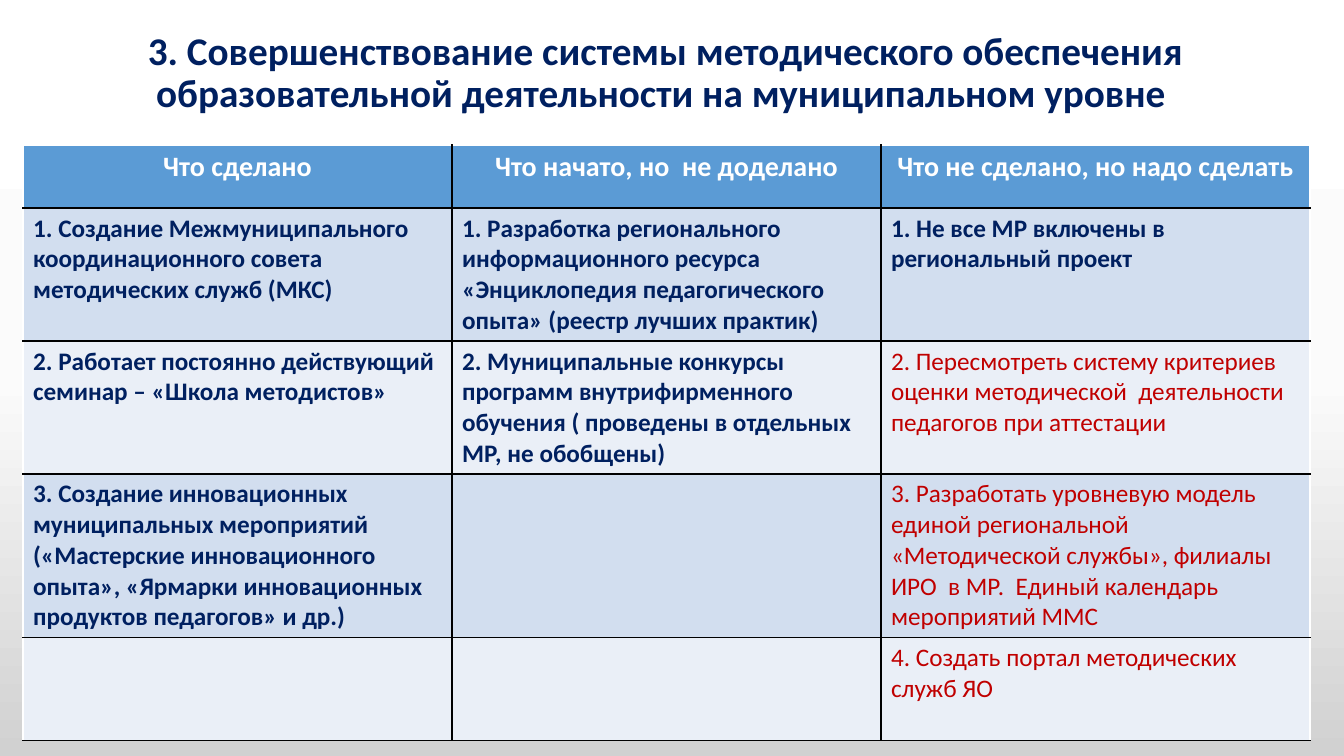
from pptx import Presentation
from pptx.dml.color import RGBColor
from pptx.enum.text import MSO_ANCHOR, PP_ALIGN
from pptx.oxml import parse_xml
from pptx.oxml.ns import nsdecls, qn
from pptx.util import Emu, Pt

TITLE = ("3. Совершенствование системы методического обеспечения "
         "образовательной деятельности на муниципальном уровне ")
HEADERS = ["Что сделано", "Что начато, но  не доделано", "Что не сделано, но надо сделать"]
TASKS = [
    ["1. Создание Межмуниципального координационного совета методических служб (МКС)",
     "1. Разработка регионального информационного ресурса «Энциклопедия педагогического "
     "опыта» (реестр лучших практик)",
     "1. Не все МР включены в региональный проект"],
    ["2. Работает постоянно действующий семинар – «Школа методистов»",
     "2. Муниципальные конкурсы программ внутрифирменного обучения ( проведены в отдельных "
     "МР, не обобщены)",
     "2. Пересмотреть систему критериев оценки методической  деятельности педагогов при аттестации"],
    ["3. Создание инновационных муниципальных мероприятий («Мастерские инновационного опыта», "
     "«Ярмарки инновационных продуктов педагогов» и др.)",
     "",
     "3. Разработать уровневую модель единой региональной «Методической службы», филиалы "
     "ИРО  в МР.  Единый календарь мероприятий ММС"],
    ["", "", "4. Создать портал методических служб ЯО"],
]
COLORS = {
    "navy": "002060", "red": "C00000", "white": "FFFFFF", "black": "000000",
    "header": "5B9BD5", "odd": "D2DEEF", "even": "EAEFF7",
}
BACKGROUND_STOPS = [(0, "FFFFFF"), (50, "FBFBFB"), (100, "D1D1D1")]

PX = 9072
SLIDE_SIZE = (1344, 756)
TITLE_BOX = (23, 16, 1284, 115)
TABLE_LEFT, TABLE_TOP, COLUMN_WIDTH = 23, 145, 429
ROW_HEIGHTS = [63, 133, 133, 164, 103]


def px(length):
    return Emu(length * PX)


def write(frame, text, size=18, color="navy", bold=True, align=PP_ALIGN.LEFT, spacing=None):
    frame.word_wrap = True
    paragraph = frame.paragraphs[0]
    paragraph.alignment = align
    paragraph.line_spacing = spacing
    if not text:
        paragraph.font.size = Pt(size)
        return
    run = paragraph.add_run()
    run.text = text
    run.font.name = "Calibri"
    run.font.size = Pt(size)
    run.font.bold = bold
    run.font.color.rgb = RGBColor.from_string(COLORS[color])


def set_borders(cell, **sides):
    properties = cell._tc.get_or_add_tcPr()
    for index, side in enumerate("LRTB"):
        properties.insert(index, parse_xml(
            f'<a:ln{side} {nsdecls("a")} w="12700"><a:solidFill>'
            f'<a:srgbClr val="{COLORS[sides[side]]}"/></a:solidFill></a:ln{side}>'))


def paint_background(slide):
    fill = slide.background.fill
    fill.gradient()
    fill.gradient_angle = 270
    stops = next(slide.element.iter(qn("a:gsLst")))
    for stop in list(stops):
        stops.remove(stop)
    for position, color in BACKGROUND_STOPS:
        stops.append(parse_xml(
            f'<a:gs {nsdecls("a")} pos="{position * 1000}"><a:srgbClr val="{color}"/></a:gs>'))


def add_title(slide):
    frame = slide.shapes.add_textbox(*map(px, TITLE_BOX)).text_frame
    frame.vertical_anchor = MSO_ANCHOR.MIDDLE
    write(frame, TITLE, size=28, align=PP_ALIGN.CENTER, spacing=0.9)


def add_task_table(slide):
    rows = [HEADERS] + TASKS
    last_column = len(HEADERS) - 1
    table = slide.shapes.add_table(
        len(rows), len(HEADERS), px(TABLE_LEFT), px(TABLE_TOP),
        px(COLUMN_WIDTH * len(HEADERS)), px(sum(ROW_HEIGHTS))).table
    for column in table.columns:
        column.width = px(COLUMN_WIDTH)
    for r, texts in enumerate(rows):
        table.rows[r].height = px(ROW_HEIGHTS[r])
        band = "header" if r == 0 else "odd" if r % 2 else "even"
        for c, text in enumerate(texts):
            cell = table.cell(r, c)
            cell.fill.solid()
            cell.fill.fore_color.rgb = RGBColor.from_string(COLORS[band])
            set_borders(cell,
                        L="black" if c else "white",
                        R="white" if c == last_column else "black",
                        T="black" if r else "white",
                        B="black")
            if r == 0:
                write(cell.text_frame, text, size=20, color="white", align=PP_ALIGN.CENTER)
            else:
                planned = c == last_column and r > 1
                write(cell.text_frame, text, color="red" if planned else "navy", bold=not planned)


def main():
    deck = Presentation()
    deck.slide_width, deck.slide_height = map(px, SLIDE_SIZE)
    slide = deck.slides.add_slide(deck.slide_layouts[6])
    paint_background(slide)
    add_title(slide)
    add_task_table(slide)
    deck.save("out.pptx")


if __name__ == "__main__":
    main()
